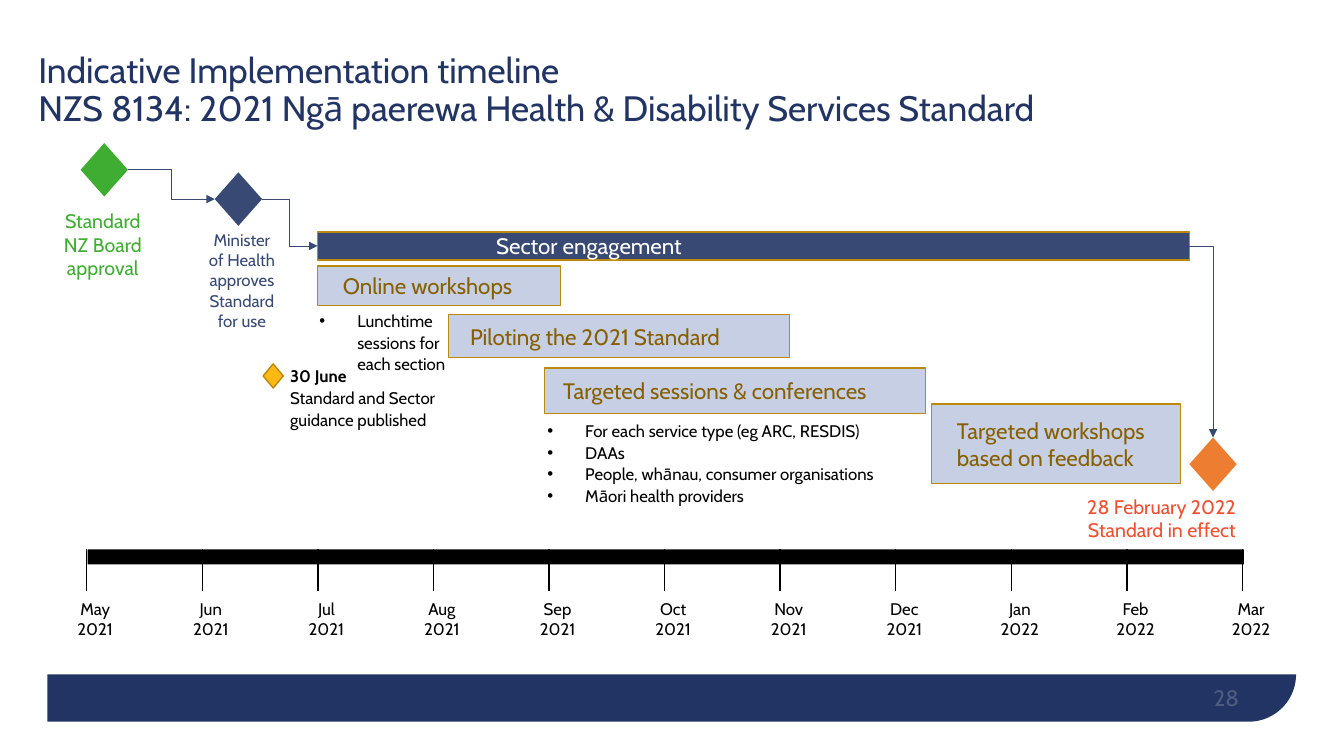
from dataclasses import dataclass
from math import cos, pi, sin
from typing import NamedTuple

from lxml.etree import SubElement
from pptx import Presentation
from pptx.dml.color import RGBColor
from pptx.enum.shapes import MSO_CONNECTOR, MSO_SHAPE
from pptx.enum.text import MSO_ANCHOR, MSO_AUTO_SIZE, PP_ALIGN
from pptx.oxml.ns import qn
from pptx.util import Inches, Pt

W, H = Inches(13.333), Inches(7.5)
FONT = "Cabin"
NAVY, SLATE, PALE, GOLD, BROWN = "213463", "384973", "C6CFE4", "BB890E", "876001"
GREEN, ORANGE, RED, YELLOW, BLACK, WHITE = "3FAD31", "ED7D31", "F04E30", "FDB913", "000000", "FFFFFF"
MUTED = "4D5D82"
AXIS_X, AXIS_Y, TICK_END, MONTH = 6.45, 72.67, 78.13, 8.6
MONTHS = ["May", "Jun", "Jul", "Aug", "Sep", "Oct", "Nov", "Dec", "Jan", "Feb", "Mar"]


class Box(NamedTuple):
    """Left, top, width and height in percent of the slide."""
    x: float
    y: float
    w: float
    h: float


@dataclass
class Bar:
    """A phase of the timeline with its label."""
    box: Box
    text: str
    inset: float
    fill: str = PALE
    color: str = BROWN


@dataclass
class Milestone:
    """A diamond marker."""
    box: Box
    fill: str
    line: str | None = None


@dataclass
class Label:
    """A free text with one entry per paragraph."""
    box: Box
    paras: list[str]
    color: str = BLACK
    size: float = 12
    align: PP_ALIGN = PP_ALIGN.CENTER
    anchor: MSO_ANCHOR = MSO_ANCHOR.TOP
    spacing: float = 1.0
    bold_first: bool = False


TITLE = Label(Box(2.1, 3.07, 81, 18), [
    "Indicative Implementation timeline\n"
    "NZS 8134: 2021 Ngā paerewa Health & Disability Services Standard"],
    NAVY, 25.2, PP_ALIGN.LEFT, MSO_ANCHOR.MIDDLE, 0.9)
LISTS = [
    Label(Box(23.02, 40.27, 12.22, 9.73), ["Lunchtime sessions for each section"],
          align=PP_ALIGN.LEFT, spacing=1.07),
    Label(Box(39.98, 54.8, 26.62, 12.67),
          ["For each service type (eg ARC, RESDIS)", "DAAs",
           "People, whānau, consumer organisations", "Māori health providers"],
          align=PP_ALIGN.LEFT, spacing=1.07),
]
BARS = [
    Bar(Box(23.62, 30.67, 64.88, 3.73), "Sector engagement", 13.3, SLATE, WHITE),
    Bar(Box(23.62, 35.2, 18.08, 5.2), "Online workshops", 1.9),
    Bar(Box(33.38, 41.6, 25.35, 5.73), "Piloting the 2021 Standard", 1.6),
    Bar(Box(40.5, 48.67, 28.35, 6), "Targeted sessions & conferences", 1.4),
    Bar(Box(69.3, 53.47, 18.52, 10.53), "Targeted workshops based on feedback", 1.9),
]
MILESTONES = [
    Milestone(Box(6, 18.93, 3.52, 7.07), GREEN),
    Milestone(Box(15.98, 22.8, 3.52, 7.07), SLATE),
    Milestone(Box(88.5, 57.87, 3.52, 7.07), ORANGE),
    Milestone(Box(19.58, 48.13, 1.5, 3.2), YELLOW, GOLD),
]
LABELS = [
    Label(Box(3.3, 25.73, 8.7, 13.2), ["Standard NZ Board approval"], GREEN, 14,
          anchor=MSO_ANCHOR.MIDDLE),
    Label(Box(12.53, 29.73, 10.95, 14.8),
          ["Minister\nof Health approves Standard", "for use"], SLATE),
    Label(Box(20.85, 47.6, 15.3, 9.73),
          ["30 June", "Standard and Sector guidance published"],
          align=PP_ALIGN.LEFT, spacing=1.07, bold_first=True),
    Label(Box(73.2, 64.8, 19.5, 7.6), ["28 February 2022", "Standard in effect"],
          RED, 14, PP_ALIGN.RIGHT),
    Label(Box(69.68, 88.67, 23.25, 6), ["28"], MUTED, 16, PP_ALIGN.RIGHT, MSO_ANCHOR.BOTTOM),
]


def px(share: float) -> int:
    """Turn a percentage of the slide width into EMU."""
    return round(W * share / 100)


def py(share: float) -> int:
    """Turn a percentage of the slide height into EMU."""
    return round(H * share / 100)


def emu(box: Box) -> tuple[int, int, int, int]:
    """Turn a box into EMU lengths."""
    return px(box.x), py(box.y), px(box.w), py(box.h)


def rgb(color: str) -> RGBColor:
    """Turn a hex string into a colour."""
    return RGBColor.from_string(color)


def paint(sp, fill: str, line: str | None = None) -> None:
    """Set fill and outline and drop the shadow."""
    sp.shadow.inherit = False
    sp.fill.solid()
    sp.fill.fore_color.rgb = rgb(fill)
    if line:
        sp.line.color.rgb = rgb(line)
        sp.line.width = Pt(1)
    else:
        sp.line.fill.background()


def write(sp, label: Label) -> None:
    """Fill a shape's text frame with the paragraphs of a label."""
    tf = sp.text_frame
    tf.word_wrap = True
    tf.auto_size = MSO_AUTO_SIZE.NONE
    tf.vertical_anchor = label.anchor
    for i, text in enumerate(label.paras):
        p = tf.paragraphs[0] if i == 0 else tf.add_paragraph()
        p.text = text
        p.alignment, p.line_spacing, p.space_before = label.align, label.spacing, Pt(0)
        p.font.name, p.font.size = FONT, Pt(label.size)
        p.font.color.rgb = rgb(label.color)
        p.font.bold = label.bold_first and i == 0


def place(ph, label: Label) -> None:
    """Move a placeholder and write its text."""
    ph.left, ph.top, ph.width, ph.height = emu(label.box)
    write(ph, label)


def add_label(s, label: Label) -> None:
    """Add a text box."""
    write(s.shapes.add_textbox(*emu(label.box)), label)


def add_bar(s, bar: Bar):
    """Add a phase bar with its label inside."""
    sp = s.shapes.add_shape(MSO_SHAPE.RECTANGLE, *emu(bar.box))
    paint(sp, bar.fill, GOLD)
    write(sp, Label(bar.box, [bar.text], bar.color, 16, PP_ALIGN.LEFT, MSO_ANCHOR.MIDDLE))
    tf = sp.text_frame
    tf.margin_left, tf.margin_top, tf.margin_bottom = px(bar.inset), 0, 0
    return sp


def add_milestone(s, stone: Milestone):
    """Add a diamond."""
    sp = s.shapes.add_shape(MSO_SHAPE.DIAMOND, *emu(stone.box))
    paint(sp, stone.fill, stone.line)
    return sp


def style_line(cn, color: str, width: float) -> None:
    """Set a connector's line and drop its shadow."""
    cn.line.color.rgb = rgb(color)
    cn.line.width = Pt(width)
    SubElement(cn._element.spPr, qn("a:effectLst"))


def add_arrow(s, start, end, end_site: int, preset: str = "bentConnector3") -> None:
    """Join the right side of one shape to a site of another."""
    cn = s.shapes.add_connector(MSO_CONNECTOR.ELBOW, 0, 0, 0, 0)
    cn.begin_connect(start, 3)
    cn.end_connect(end, end_site)
    cn._element.spPr.find(qn("a:prstGeom")).set("prst", preset)
    style_line(cn, SLATE, 0.5)
    SubElement(cn.line._get_or_add_ln(), qn("a:tailEnd"), type="triangle")


def add_footer(s) -> None:
    """Add the band with its round lower right corner."""
    x, y, w, h = emu(Box(3.52, 89.2, 92.92, 6.27))
    arc = [(x + w - h + round(h * cos(a)), y + round(h * sin(a)))
           for a in (pi / 2 * i / 24 for i in range(25))]
    fb = s.shapes.build_freeform(x, y)
    fb.add_line_segments([(x + w, y), *arc, (x, y + h)], close=True)
    paint(fb.convert_to_shape(), NAVY)


def add_axis(s) -> None:
    """Add the month axis with ticks and labels."""
    for i, month in enumerate(MONTHS):
        x = AXIS_X + i * MONTH
        cn = s.shapes.add_connector(MSO_CONNECTOR.STRAIGHT, px(x), py(AXIS_Y), px(x), py(TICK_END))
        style_line(cn, BLACK, 1)
        year = 2021 if i < 8 else 2022
        add_label(s, Label(Box(x - 1.95, 78.53, 5.18, 6.67), [f"{month}\n{year}"]))
    axis = s.shapes.add_shape(MSO_SHAPE.RECTANGLE, *emu(Box(6.52, AXIS_Y, 86.03, 2)))
    paint(axis, BLACK)


def main() -> None:
    """Build and save the slide."""
    prs = Presentation()
    prs.slide_width, prs.slide_height = W, H
    s = prs.slides.add_slide(prs.slide_layouts[3])
    for ph, label in zip(s.placeholders, [TITLE, *LISTS]):
        place(ph, label)
    add_footer(s)
    add_axis(s)
    engagement, *_ = [add_bar(s, bar) for bar in BARS]
    board, minister, effect, _ = [add_milestone(s, stone) for stone in MILESTONES]
    add_arrow(s, board, minister, 1)
    add_arrow(s, minister, engagement, 1)
    add_arrow(s, engagement, effect, 0, "bentConnector2")
    for label in LABELS:
        add_label(s, label)
    prs.save("out.pptx")


if __name__ == "__main__":
    main()
